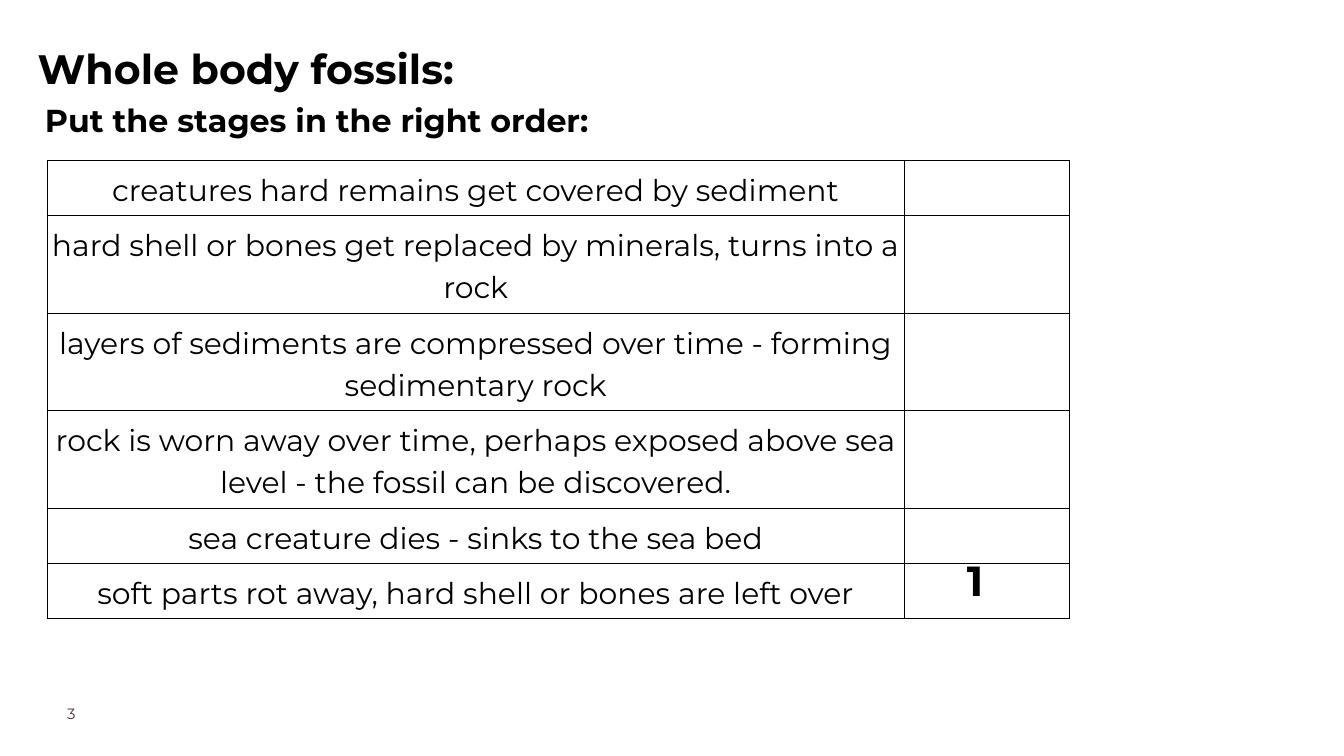
"""Build the slide on ordering the stages of whole body fossils."""
from dataclasses import dataclass
from typing import Any

from lxml.etree import SubElement
from pptx import Presentation
from pptx.dml.color import RGBColor as Rgb
from pptx.enum.text import MSO_ANCHOR as Anchor, PP_ALIGN as Align
from pptx.oxml.ns import qn
from pptx.util import Emu, Pt

EMU_PER_PX = 9144


@dataclass(frozen=True)
class Theme:
    font: str = "Montserrat"
    ink: str = "000000"
    muted: str = "4B3241"
    title: int = 44
    subtitle: int = 34
    body: int = 32
    answer: int = 45
    page_number: int = 16
    border: int = 1


@dataclass(frozen=True)
class Label:
    text: str
    left: int
    top: int
    width: int
    height: int
    size: int
    inset: int = 10
    bold: bool = True
    color: str = Theme.ink
    spacing: float = 1.0


@dataclass(frozen=True)
class Stage:
    text: str
    height: int


THEME = Theme()
LABELS = (
    Label("3", 100, 1048, 157, 39, THEME.page_number, inset=0, bold=False, color=THEME.muted),
    Label("Whole body fossils:", 56, 54, 1175, 86, THEME.title, inset=0, spacing=1.15),
    Label("Put the stages in the right order:", 57, 140, 1050, 98, THEME.subtitle),
)
ANSWER = Label("1", 1429, 815, 82, 98, THEME.answer)
ONE_LINE, TWO_LINES = 82, 145
STAGES = (
    Stage("creatures hard remains get covered by sediment", ONE_LINE),
    Stage("hard shell or bones get replaced by minerals, turns into a rock", TWO_LINES),
    Stage("layers of sediments are compressed over time - forming sedimentary rock", TWO_LINES),
    Stage("rock is worn away over time, perhaps exposed above sea level - the fossil can be discovered.",
          TWO_LINES),
    Stage("sea creature dies - sinks to the sea bed", ONE_LINE),
    Stage("soft parts rot away, hard shell or bones are left over", ONE_LINE),
)
COLUMNS = (1276, 245)


def px(length: int) -> Emu:
    return Emu(length * EMU_PER_PX)


def apply(target: Any, values: dict[str, Any]) -> None:
    for name, value in values.items():
        setattr(target, name, value)


def write(para: Any, text: str, size: int, bold: bool, color: str) -> None:
    span = para.add_run()
    span.text = text
    apply(span.font, {"name": THEME.font, "size": Pt(size), "bold": bold})
    span.font.color.rgb = Rgb.from_string(color)


def draw_label(page: Any, label: Label) -> None:
    box = page.shapes.add_textbox(px(label.left), px(label.top), px(label.width), px(label.height))
    frame = box.text_frame
    inset = px(label.inset)
    apply(frame, {"word_wrap": True, "vertical_anchor": Anchor.TOP, "margin_left": inset,
                  "margin_right": inset, "margin_top": inset, "margin_bottom": inset})
    para = frame.paragraphs[0]
    para.line_spacing = label.spacing
    write(para, label.text, label.size, label.bold, label.color)


def format_cell(cell: Any) -> None:
    apply(cell, {"margin_left": px(7), "margin_right": px(7), "margin_top": px(10),
                 "margin_bottom": px(10), "vertical_anchor": Anchor.TOP})
    properties = cell._tc.get_or_add_tcPr()
    for side in ("lnL", "lnR", "lnT", "lnB"):
        line = SubElement(properties, qn(f"a:{side}"), w=str(Pt(THEME.border)))
        SubElement(SubElement(line, qn("a:solidFill")), qn("a:srgbClr"), val=THEME.ink)
    cell.fill.background()


def draw_stages(page: Any, left: int, top: int) -> None:
    height = sum(stage.height for stage in STAGES)
    table = page.shapes.add_table(len(STAGES), len(COLUMNS), px(left), px(top),
                                  px(sum(COLUMNS)), px(height)).table
    apply(table, {"first_row": False, "horz_banding": False})
    for column, width in zip(table.columns, COLUMNS):
        column.width = px(width)
    for row, stage in zip(table.rows, STAGES):
        row.height = px(stage.height)
        for cell in row.cells:
            format_cell(cell)
        para = row.cells[0].text_frame.paragraphs[0]
        apply(para, {"alignment": Align.CENTER, "line_spacing": 1.15})
        write(para, stage.text, THEME.body, False, THEME.ink)


def main() -> None:
    deck = Presentation()
    apply(deck, {"slide_width": px(2000), "slide_height": px(1125)})
    page = deck.slides.add_slide(deck.slide_layouts[6])
    for label in LABELS:
        draw_label(page, label)
    draw_stages(page, 70, 239)
    draw_label(page, ANSWER)
    deck.save("out.pptx")


if __name__ == "__main__":
    main()
